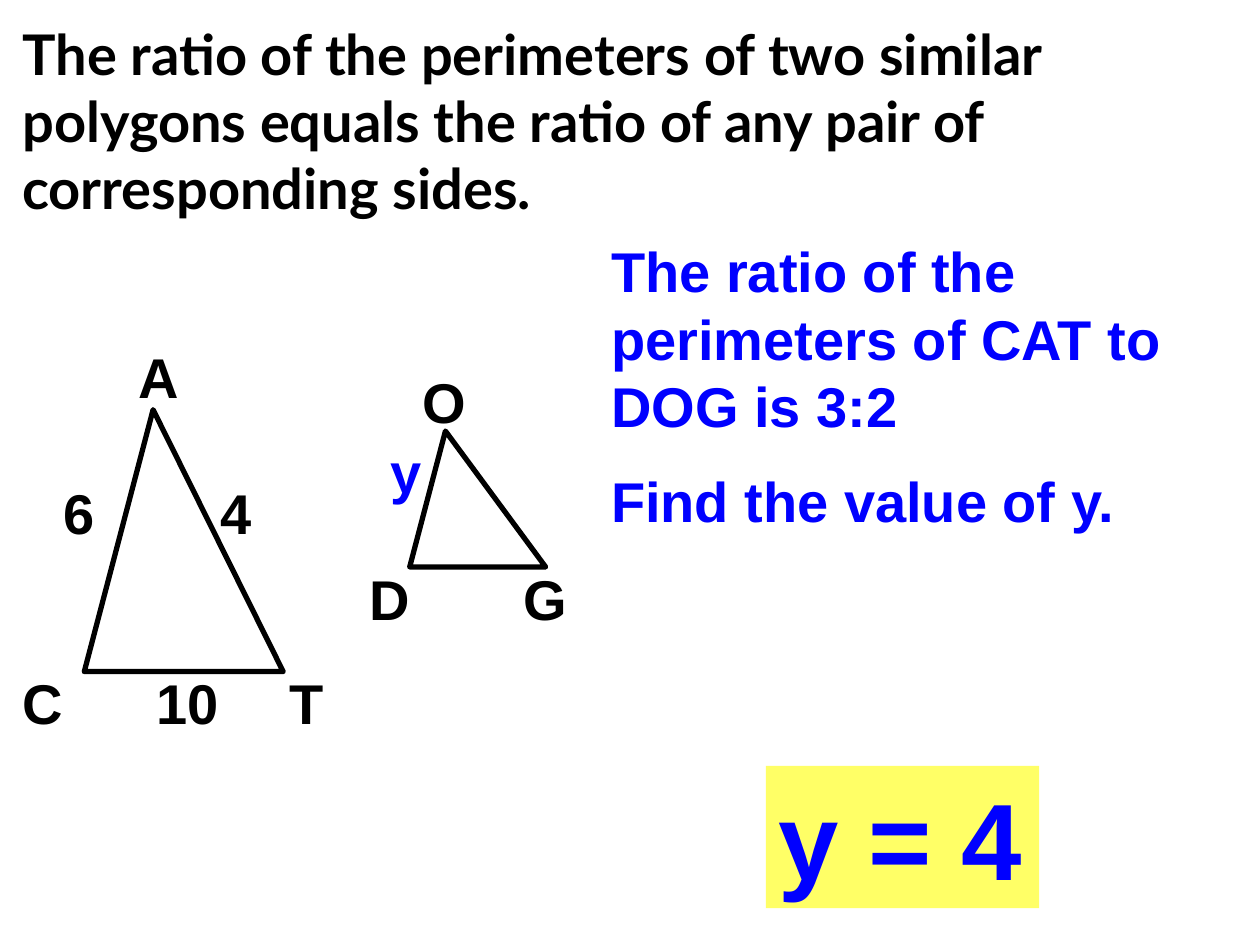
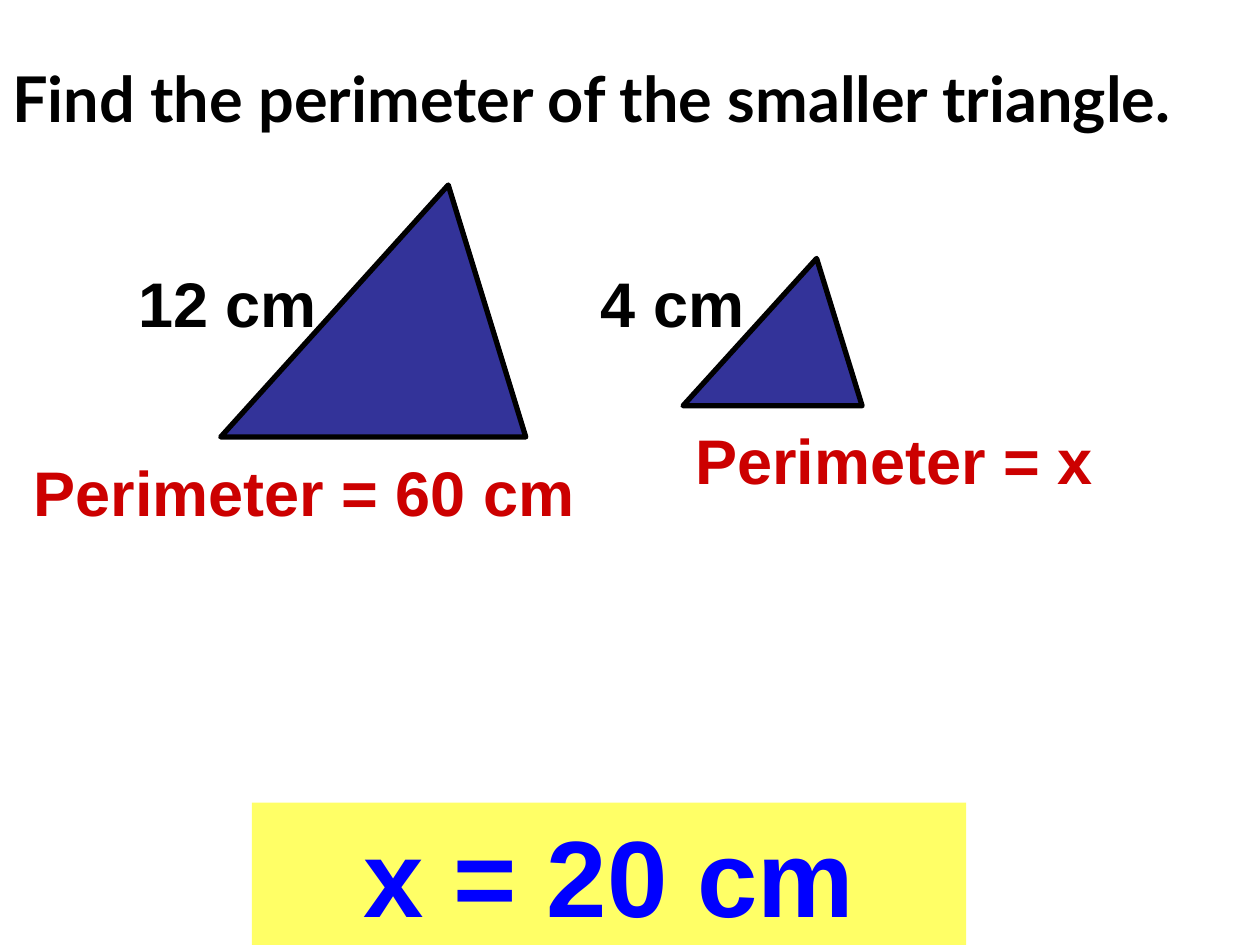
from pptx import Presentation
from pptx import util as u
from pptx.dml.color import RGBColor
from pptx.enum import shapes, text

COLOURS = {
    "ink": "000000",
    "question": "0000FF",
    "perimeter": "CC0000",
    "triangle": "333399",
    "answer": "FFFF66",
}
TITLE_FONT, BODY_FONT = "Lato", "Arial"
LABEL_WIDTH = 2.1


def colour(name):
    return RGBColor.from_string(COLOURS[name])


def write(shape, lines, size, ink="ink", font=BODY_FONT,
          align=text.PP_ALIGN.LEFT, anchor=text.MSO_ANCHOR.TOP):
    """Fill a shape with bold paragraphs, half a line apart."""
    frame = shape.text_frame
    frame.word_wrap = True
    frame.vertical_anchor = anchor
    frame.text = "\n".join(lines)
    for number, para in enumerate(frame.paragraphs):
        para.alignment = align
        if number:
            para.space_before = u.Pt(size / 2)
        for span in para.runs:
            span.font.name = font
            span.font.size = u.Pt(size)
            span.font.bold = True
            span.font.color.rgb = colour(ink)


def add_text(page, box, lines, size, **style):
    shape = page.shapes.add_textbox(*map(u.Cm, box))
    write(shape, lines, size, **style)


def add_title(page, box, wording, size):
    add_text(page, box, [wording], size, font=TITLE_FONT,
             anchor=text.MSO_ANCHOR.MIDDLE)


def add_answer(page, box, wording, align):
    shape = page.shapes.add_shape(shapes.MSO_SHAPE.RECTANGLE, *map(u.Cm, box))
    shape.shadow.inherit = False
    shape.fill.solid()
    shape.fill.fore_color.rgb = colour("answer")
    shape.line.fill.background()
    write(shape, [wording], 62, "question", align=align)


def add_triangle(page, box, apex, labels, size, fill=None):
    """Draw a triangle; each label is (wording, dx, dy, width, ink) from its corner."""
    left, top, _, _ = box
    shape = page.shapes.add_shape(
        shapes.MSO_SHAPE.ISOSCELES_TRIANGLE, *map(u.Cm, box))
    shape.shadow.inherit = False
    shape.adjustments[0] = apex
    if fill:
        shape.fill.solid()
        shape.fill.fore_color.rgb = colour(fill)
    else:
        shape.fill.background()
    shape.line.color.rgb = colour("ink")
    shape.line.width = u.Pt(3)
    for wording, dx, dy, width, ink in labels:
        add_text(page, (left + dx, top + dy, width, size / 20),
                 [wording], size, ink=ink)


def build_ratio_slide(page):
    add_title(page, (0.2, 0.2, 23.7, 4.45),
              "The ratio of the perimeters of two similar polygons equals "
              "the ratio of any pair of corresponding sides.", 32)
    cat = [("A", 0.84, -1.48), ("C", -1.5, 5.1), ("10", 1.2, 5.1),
           ("T", 3.89, 5.1), ("6", -0.66, 1.27), ("4", 2.49, 1.27)]
    dog = [("O", 0, -1.4), ("D", -1.07, 2.56), ("G", 2.05, 2.56)]
    add_triangle(page, (1.7, 8.26, 4.01, 5.28), 0.346,
                 [(*label, LABEL_WIDTH, "ink") for label in cat], 32)
    add_triangle(page, (8.26, 8.69, 2.74, 2.74), 0.263,
                 [(*label, LABEL_WIDTH, "ink") for label in dog]
                 + [("y", -0.64, 0, LABEL_WIDTH, "question")], 32)
    add_text(page, (12.07, 4.65, 11.63, 6.35),
             ["The ratio of the perimeters of CAT to DOG is 3:2",
              "Find the value of y."], 32, ink="question")
    add_answer(page, (15.44, 15.44, 5.51, 2.87), "y = 4", text.PP_ALIGN.LEFT)


def build_perimeter_slide(page):
    add_triangle(page, (13.77, 5.21, 3.61, 2.97), 0.746,
                 [("4 cm", -1.91, 0, 4.01, "ink"),
                  ("Perimeter = x", 0, 3.17, 11.23, "perimeter")],
                 36, "triangle")
    add_triangle(page, (4.45, 3.73, 6.15, 5.08), 0.746,
                 [("12 cm", -1.91, 1.48, 4.34, "ink"),
                  ("Perimeter = 60 cm", -4.02, 5.29, 12.07, "perimeter")],
                 36, "triangle")
    add_answer(page, (5.08, 16.18, 14.4, 2.87), "x = 20 cm",
               text.PP_ALIGN.CENTER)
    add_title(page, (0, 0, 25.4, 3.94),
              "Find the perimeter of the smaller triangle.", 36)


def main():
    deck = Presentation()
    deck.slide_width, deck.slide_height = u.Cm(25.4), u.Cm(19.05)
    for build in (build_ratio_slide, build_perimeter_slide):
        build(deck.slides.add_slide(deck.slide_layouts[6]))
    deck.save("out.pptx")


if __name__ == "__main__":
    main()
